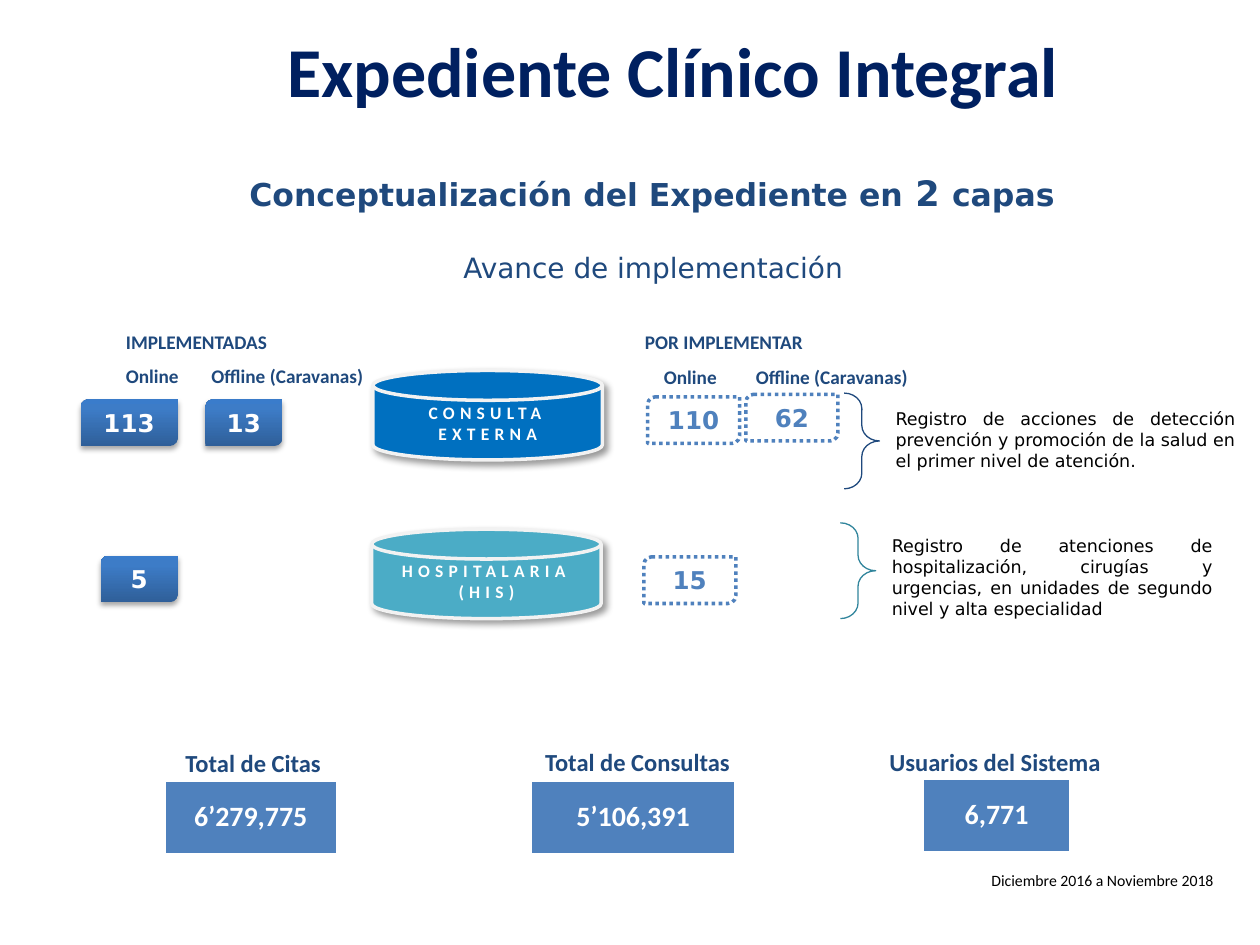
from copy import deepcopy

from lxml.etree import SubElement
from pptx import Presentation
from pptx.dml.color import RGBColor
from pptx.enum.dml import MSO_LINE
from pptx.enum.shapes import MSO_SHAPE as Shape
from pptx.enum.text import MSO_ANCHOR as Anchor, MSO_AUTO_SIZE as AutoSize, PP_ALIGN as Align
from pptx.oxml.ns import qn
from pptx.util import Inches, Pt

NAVY = RGBColor(0x00, 0x20, 0x60)
DARK_BLUE = RGBColor(0x1F, 0x49, 0x7D)
BLUE = RGBColor(0x4F, 0x81, 0xBD)
BRIGHT_BLUE = RGBColor(0x00, 0x70, 0xC0)
TEAL = RGBColor(0x4B, 0xAC, 0xC6)
DARK_TEAL = RGBColor(0x31, 0x85, 0x9C)
PALE_GRAY = RGBColor(0xF2, 0xF2, 0xF2)
WHITE = RGBColor(0xFF, 0xFF, 0xFF)
BLACK = RGBColor(0x00, 0x00, 0x00)
GRADIENT = [(0, RGBColor(0x2F, 0x5F, 0x99)), (0.8, RGBColor(0x3D, 0x7C, 0xC7)),
            (1, RGBColor(0x3A, 0x7C, 0xCB))]
SANS, WIDE = "Calibri", "DejaVu Sans"


def write(shape, text, size, font, color, bold=True, align=Align.CENTER,
          anchor=Anchor.TOP, wrap=True, grow=True):
    frame = shape.text_frame
    frame.text = text
    frame.word_wrap = wrap
    frame.auto_size = AutoSize.SHAPE_TO_FIT_TEXT if grow else AutoSize.NONE
    frame.vertical_anchor = anchor
    paragraph = frame.paragraphs[0]
    paragraph.alignment = align
    for run in paragraph.runs:
        run.font.size, run.font.name, run.font.bold = Pt(size), font, bold
        run.font.color.rgb = color
    return paragraph


def add_shadow(shape, opacity, blur, distance, angle):
    effects = shape._element.spPr.find(qn("a:effectLst"))
    shadow = SubElement(effects, qn("a:outerShdw"), blurRad=str(Pt(blur)), dist=str(Pt(distance)),
                        dir=str(angle * 60000), algn="tl", rotWithShape="0")
    black = SubElement(shadow, qn("a:srgbClr"), val="000000")
    SubElement(black, qn("a:alpha"), val=str(opacity * 1000))


prs = Presentation()
prs.slide_width, prs.slide_height = Inches(10), Inches(7.5)
slide = prs.slides.add_slide(prs.slide_layouts[6])
shapes = slide.shapes

# Headings
title = shapes.add_textbox(Inches(1.68), Inches(0.17), Inches(7.32), Inches(0.77))
write(title, "Expediente Clínico Integral", 40, SANS, NAVY)

subtitle = shapes.add_textbox(Inches(1.01), Inches(1.31), Inches(8.33), Inches(0.44))
line = write(subtitle, "Conceptualización del Expediente en", 18, WIDE, DARK_BLUE)
for text, size in [(" 2 ", 20), ("capas", 18)]:
    run = line.add_run()
    run.text = text
    run.font.size, run.font.name, run.font.bold = Pt(size), WIDE, True
    run.font.color.rgb = DARK_BLUE

progress = shapes.add_textbox(Inches(1.02), Inches(1.94), Inches(8.33), Inches(0.37))
write(progress, "Avance de implementación", 16, WIDE, DARK_BLUE, bold=False)

# The two layers
for text, left, top, color in [("HOSPITALARIA (HIS)", 2.95, 4.2, TEAL),
                               ("CONSULTA EXTERNA", 2.96, 2.94, BRIGHT_BLUE)]:
    layer = shapes.add_shape(Shape.FLOWCHART_MAGNETIC_DISK, Inches(left), Inches(top),
                             Inches(1.82), Inches(0.71))
    layer.shadow.inherit = False
    add_shadow(layer, 40, 4, 3, 45)
    layer.fill.solid()
    layer.fill.fore_color.rgb = color
    layer.line.color.rgb = PALE_GRAY
    layer.line.width = Pt(2)
    name = write(layer, text, 10, SANS, WHITE, anchor=Anchor.MIDDLE, grow=False)
    name.runs[0]._r.get_or_add_rPr().set("spc", "300")

# Implemented units
for count, left, top, width in [("113", 0.64, 3.17, 0.77), ("13", 1.63, 3.17, 0.61),
                                ("5", 0.8, 4.41, 0.61)]:
    done = shapes.add_shape(Shape.ROUND_2_DIAG_RECTANGLE, Inches(left), Inches(top),
                            Inches(width), Inches(0.37))
    done.shadow.inherit = False
    add_shadow(done, 35, 3.1, 1.8, 90)
    done.fill.gradient()
    done.fill.gradient_angle = 90
    stop_list = done._element.spPr.find(".//" + qn("a:gsLst"))
    stop_list.append(deepcopy(stop_list[-1]))
    for stop, (position, color) in zip(done.fill.gradient_stops, GRADIENT):
        stop.position = position
        stop.color.rgb = color
    done.line.fill.background()
    write(done, count, 14, WIDE, WHITE)

# Pending units
for count, left, top in [("110", 5.14, 3.15), ("62", 5.92, 3.13), ("15", 5.11, 4.42)]:
    pending = shapes.add_shape(Shape.ROUND_2_DIAG_RECTANGLE, Inches(left), Inches(top),
                               Inches(0.73), Inches(0.37))
    pending.shadow.inherit = False
    pending.fill.background()
    pending.line.color.rgb = BLUE
    pending.line.width = Pt(2)
    pending.line.dash_style = MSO_LINE.ROUND_DOT
    write(pending, count, 14, WIDE, BLUE)

# Column labels
for text, left, top, width, height, align, wrap in [
    ("IMPLEMENTADAS", 0.64, 2.57, 1.84, 0.29, Align.CENTER, True),
    ("Online", 0.9, 2.84, 0.66, 0.29, Align.LEFT, False),
    ("Offline (Caravanas)", 1.58, 2.84, 1.43, 0.29, Align.LEFT, False),
    ("POR IMPLEMENTAR", 5.02, 2.57, 1.78, 0.29, Align.LEFT, True),
    ("Online", 5.17, 2.85, 0.79, 0.29, Align.LEFT, True),
    ("Offline (Caravanas)", 5.9, 2.85, 1.42, 0.47, Align.LEFT, True),
]:
    label = shapes.add_textbox(Inches(left), Inches(top), Inches(width), Inches(height))
    write(label, text, 11, SANS, DARK_BLUE, align=align, wrap=wrap)

# Layer descriptions with their braces
for text, left, top, width, height, brace_left, brace_top, color in [
    ("Registro de acciones de detección prevención y promoción de la salud en el primer nivel "
     "de atención.", 7.01, 3.19, 2.89, 0.61, 6.7, 3.12, DARK_BLUE),
    ("Registro de atenciones de hospitalización, cirugías y urgencias, en unidades de segundo "
     "nivel y alta especialidad", 6.98, 4.2, 2.74, 0.77, 6.67, 4.15, DARK_TEAL),
]:
    description = shapes.add_textbox(Inches(left), Inches(top), Inches(width), Inches(height))
    write(description, text, 10, WIDE, BLACK, bold=False, align=Align.JUSTIFY)
    brace = shapes.add_shape(Shape.RIGHT_BRACE, Inches(brace_left), Inches(brace_top),
                             Inches(0.28), Inches(0.76))
    brace.shadow.inherit = False
    brace.adjustments[0] = 0.44
    brace.fill.background()
    brace.line.color.rgb = color
    brace.line.width = Pt(0.75)

# Totals with their captions
for total, left, top, width, caption, caption_left, caption_top, caption_width, align, wrap in [
    ("6’279,775", 1.3, 6.19, 1.38, "Total de Citas", 1.34, 5.89, 1.34, Align.CENTER, True),
    ("5’106,391", 4.21, 6.19, 1.63, "Total de Consultas", 4.18, 5.88, 1.76, Align.CENTER, True),
    ("6,771", 7.32, 6.18, 1.18, "Usuarios del Sistema", 6.96, 5.88, 1.92, Align.LEFT, False),
]:
    box = shapes.add_shape(Shape.RECTANGLE, Inches(left), Inches(top), Inches(width), Inches(0.59))
    box.shadow.inherit = False
    box.fill.solid()
    box.fill.fore_color.rgb = BLUE
    box.line.color.rgb = WHITE
    box.line.width = Pt(2)
    frame = box.text_frame
    frame.margin_left = frame.margin_right = frame.margin_top = frame.margin_bottom = Inches(0.07)
    figure = write(box, total, 16, SANS, WHITE, anchor=Anchor.MIDDLE, grow=False)
    figure.line_spacing = 0.9
    heading = shapes.add_textbox(Inches(caption_left), Inches(caption_top),
                                 Inches(caption_width), Inches(0.34))
    write(heading, caption, 14, SANS, DARK_BLUE, align=align, wrap=wrap)

# Period covered
period = shapes.add_textbox(Inches(7.77), Inches(6.86), Inches(1.98), Inches(0.25))
write(period, "Diciembre 2016 a Noviembre 2018", 9, SANS, BLACK, bold=False,
      align=Align.LEFT, wrap=False)

prs.save("out.pptx")
